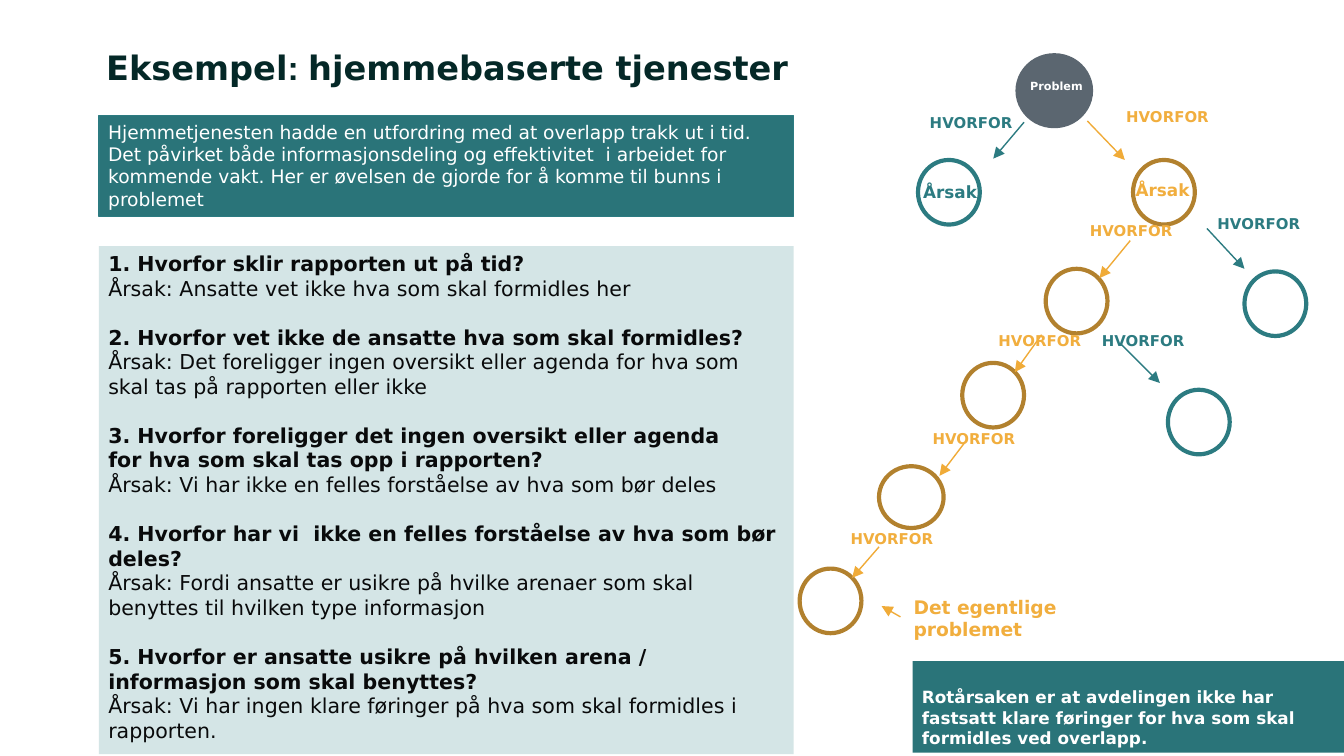
import dataclasses

import lxml.etree
import pptx
import pptx.dml.color
import pptx.enum.shapes
import pptx.enum.text
import pptx.oxml.ns
import pptx.util

Pt = pptx.util.Pt
qn = pptx.oxml.ns.qn
Align = pptx.enum.text.PP_ALIGN
Anchor = pptx.enum.text.MSO_ANCHOR
Shape = pptx.enum.shapes.MSO_SHAPE


@dataclasses.dataclass(frozen=True)
class Theme:
    font: str = "DejaVu Sans"
    colon_font: str = "Arial"
    heading: str = "042827"
    ink: str = "090A0B"
    white: str = "FFFFFF"
    pale: str = "D4E5E6"
    banner: str = "2A7479"
    teal: str = "2C7B81"
    orange: str = "F1AE3E"
    arrow: str = "F0AB38"
    ring: str = "B2812E"
    slate: str = "5B6670"
    title_size: float = 18
    list_size: float = 11
    text_size: float = 10
    cause_size: float = 9
    label_size: float = 8
    problem_size: float = 6
    thin: float = 0.75
    thick: float = 2.25


class Board:
    def __init__(self, slide, theme):
        self.slide = slide
        self.theme = theme

    def color(self, value):
        return pptx.dml.color.RGBColor.from_string(value)

    def place(self, shape, box):
        shape.left, shape.top, shape.width, shape.height = map(Pt, box)

    def run(self, paragraph, text, size, color, bold=False, font=None):
        run = paragraph.add_run()
        run.text = text
        run.font.name = font or self.theme.font
        run.font.size = Pt(size)
        run.font.bold = bold
        run.font.color.rgb = self.color(color)

    def frame(self, shape, anchor=Anchor.TOP, margins=(7.2, 3.6)):
        frame = shape.text_frame
        frame.word_wrap = True
        frame.auto_size = pptx.enum.text.MSO_AUTO_SIZE.NONE
        frame.vertical_anchor = anchor
        frame.margin_left = frame.margin_right = Pt(margins[0])
        frame.margin_top = frame.margin_bottom = Pt(margins[1])
        return frame

    def title(self, box, parts):
        shape = self.slide.shapes.title
        self.place(shape, box)
        paragraph = self.frame(shape).paragraphs[0]
        paragraph.alignment = Align.LEFT
        paragraph.line_spacing = 0.9
        for text, font in parts:
            self.run(paragraph, text, self.theme.title_size, self.theme.heading, True, font)

    def questions(self, box, pairs):
        shape = self.slide.placeholders[1]
        self.place(shape, box)
        shape.fill.solid()
        shape.fill.fore_color.rgb = self.color(self.theme.pale)
        frame = self.frame(shape, margins=(5, 2.6))
        lines = [(text, index == 0) for pair in pairs for index, text in enumerate(pair)]
        for number, (text, is_question) in enumerate(lines):
            paragraph = frame.add_paragraph() if number else frame.paragraphs[0]
            paragraph.space_before = Pt(13 if number and is_question else 0)
            properties = paragraph._p.get_or_add_pPr()
            properties.set("marL", "0")
            properties.set("indent", "0")
            lxml.etree.SubElement(properties, qn("a:buNone"))
            for index, part in enumerate(text.split("\n")):
                if index:
                    paragraph.add_line_break()
                self.run(paragraph, part, self.theme.list_size, self.theme.ink, is_question)

    def shape(self, kind, box, fill=None, line=None, width=None):
        shape = self.slide.shapes.add_shape(kind, *map(Pt, box))
        shape.shadow.inherit = False
        if fill:
            shape.fill.solid()
            shape.fill.fore_color.rgb = self.color(fill)
        else:
            shape.fill.background()
        if line:
            shape.line.color.rgb = self.color(line)
            shape.line.width = Pt(width)
        else:
            shape.line.fill.background()
        return shape

    def panel(self, box, text, size, fill, line=None, bold=False, anchor=Anchor.TOP):
        shape = self.shape(Shape.RECTANGLE, box, fill, line, self.theme.thin)
        paragraph = self.frame(shape, anchor, (5, 2.6)).paragraphs[0]
        paragraph.alignment = Align.LEFT
        self.run(paragraph, text, size, self.theme.white, bold)

    def circle(self, left, top, line, width=33.1, height=34.6):
        self.shape(Shape.OVAL, (left, top, width, height), None, line, self.theme.thick)

    def label(self, box, text, size, color, alignment=Align.LEFT):
        shape = self.slide.shapes.add_textbox(*map(Pt, box))
        paragraph = self.frame(shape).paragraphs[0]
        paragraph.alignment = alignment
        self.run(paragraph, text, size, color, True)

    def arrow(self, points, color):
        straight = pptx.enum.shapes.MSO_CONNECTOR.STRAIGHT
        connector = self.slide.shapes.add_connector(straight, *map(Pt, points))
        connector.line.color.rgb = self.color(color)
        connector.line.width = Pt(self.theme.thin)
        lxml.etree.SubElement(connector.line._get_or_add_ln(), qn("a:tailEnd"), type="triangle")
        lxml.etree.SubElement(connector._element.spPr, qn("a:effectLst"))

    def step(self, label, arrow, circle, colors):
        text_color, arrow_color, ring_color = colors
        self.circle(*circle[:2], ring_color, *circle[2:])
        self.arrow(arrow, arrow_color)
        self.label((*label, 60, 16), "HVORFOR", self.theme.label_size, text_color)


QUESTIONS = [
    ("1. Hvorfor sklir rapporten ut på tid?",
     "Årsak: Ansatte vet ikke hva som skal formidles her"),
    ("2. Hvorfor vet ikke de ansatte hva som skal formidles?",
     "Årsak: Det foreligger ingen oversikt eller agenda for hva som skal tas på rapporten eller ikke"),
    ("3. Hvorfor foreligger det ingen oversikt eller agenda \nfor hva som skal tas opp i rapporten?",
     "Årsak: Vi har ikke en felles forståelse av hva som bør deles"),
    ("4. Hvorfor har vi  ikke en felles forståelse av hva som bør deles?",
     "Årsak: Fordi ansatte er usikre på hvilke arenaer som skal benyttes til hvilken type informasjon"),
    ("5. Hvorfor er ansatte usikre på hvilken arena / informasjon som skal benyttes?",
     "Årsak: Vi har ingen klare føringer på hva som skal formidles i rapporten."),
]
MAIN_STEPS = [
    ((596.2, 54), (582.5, 64.8, 602.6, 85.7), (607, 85.7)),
    ((576.7, 115.2), (605.5, 128.9, 589, 149), (560.2, 144)),
    ((527.8, 174.2), (558, 179.3, 543.6, 199.4), (515.5, 194.4)),
    ((492.5, 226.8), (517, 236.9, 503.3, 254.9), (470.9, 249.8, 34.6, 33.1)),
    ((448.6, 280.1), (470.9, 293, 456.5, 309.6), (428.4, 304.6)),
]
SIDE_STEPS = [
    ((491, 57.6), (548.6, 65.5, 532.1, 85), (491.8, 85.7)),
    ((645.1, 111.6), (646.6, 122.4, 666.7, 144), (666.7, 145.4)),
    ((583.2, 174.2), (600.5, 184.3, 621.4, 205.2), (625.7, 208.8)),
]


def main():
    presentation = pptx.Presentation()
    presentation.slide_width, presentation.slide_height = Pt(720), Pt(405)
    theme = Theme()
    board = Board(presentation.slides.add_slide(presentation.slide_layouts[1]), theme)

    board.title((49.7, 23.8, 620.6, 78.5), [
        ("Eksempel", theme.font), (": ", theme.colon_font), ("hjemmebaserte tjenester", theme.font)])
    board.questions((53, 131.8, 372.2, 272.2), QUESTIONS)
    board.panel((53, 61.9, 372.2, 54),
                "Hjemmetjenesten hadde en utfordring med at overlapp trakk ut i tid. "
                "Det påvirket både informasjonsdeling og effektivitet  i arbeidet for kommende vakt. "
                "Her er øvelsen de gjorde for å komme til bunns i problemet",
                theme.text_size, theme.banner, theme.teal)
    board.panel((488.9, 354.2, 231.1, 49),
                "Rotårsaken er at avdelingen ikke har fastsatt klare føringer "
                "for hva som skal formidles ved overlapp.",
                theme.cause_size, theme.banner, bold=True, anchor=Anchor.BOTTOM)

    board.shape(Shape.OVAL, (545, 29.5, 39.6, 38.2), theme.slate, theme.slate, 2)
    board.label((542.2, 38.9, 47.5, 13.7), "Problem", theme.problem_size, theme.white, Align.CENTER)
    for steps, colors in ((MAIN_STEPS, (theme.orange, theme.arrow, theme.ring)),
                          (SIDE_STEPS, (theme.teal,) * 3)):
        for step in steps:
            board.step(*step, colors)
    for left, top, color in ((483.8, 93.6, theme.teal), (597.6, 92.9, theme.orange)):
        board.label((left, top, 50.4, 17.3), "Årsak", theme.cause_size, color, Align.CENTER)
    board.label((482.4, 315.4, 117.4, 30.2), "Det egentlige problemet", theme.text_size, theme.orange)
    board.arrow((482.4, 330.5, 472.3, 324.7), theme.arrow)

    presentation.save("out.pptx")


if __name__ == "__main__":
    main()
